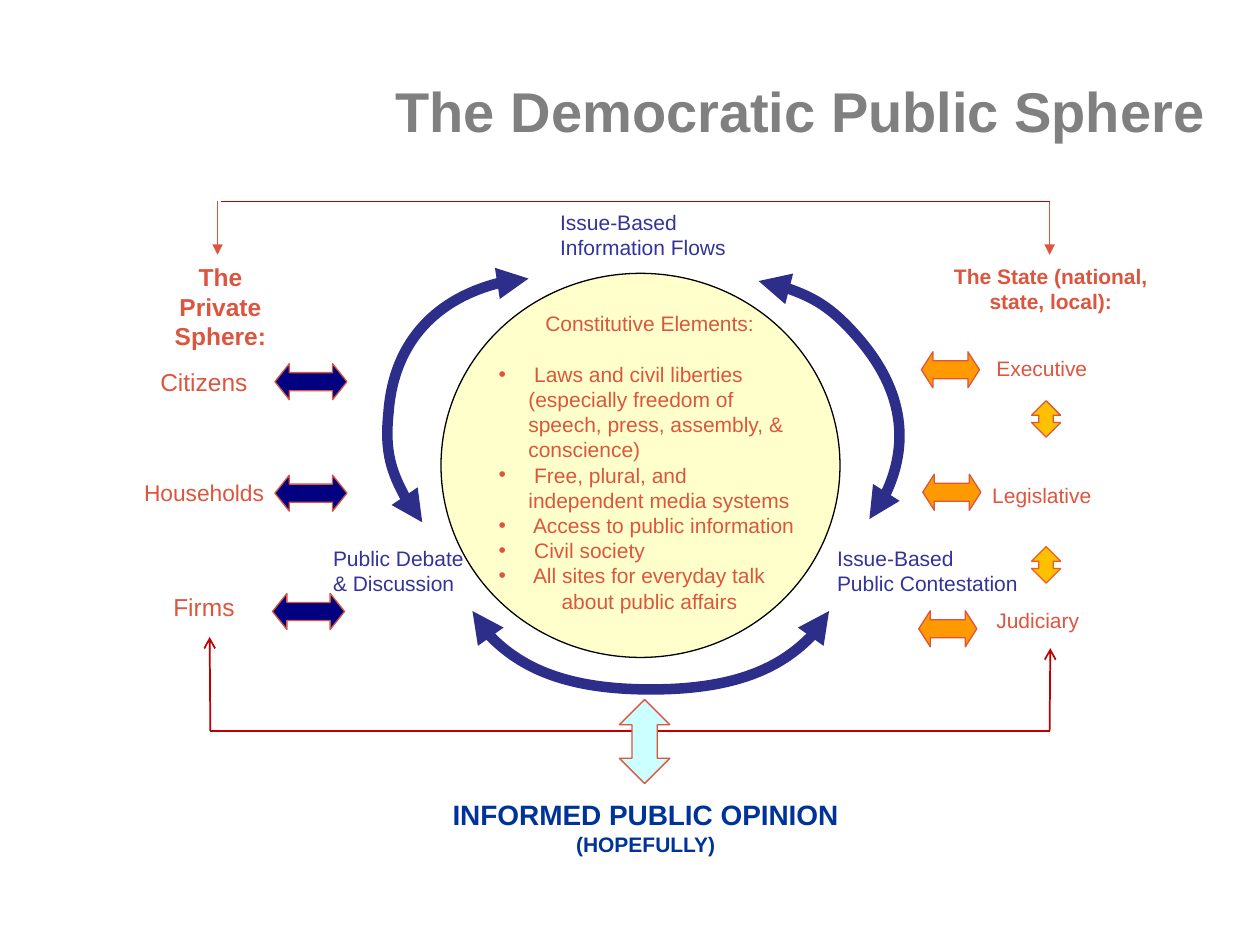
from lxml import etree
from pptx import Presentation
from pptx.dml.color import RGBColor
from pptx.enum.shapes import MSO_CONNECTOR, MSO_SHAPE
from pptx.enum.text import MSO_ANCHOR, MSO_AUTO_SIZE, PP_ALIGN
from pptx.oxml.ns import qn
from pptx.util import Pt

LEFT, CENTER = PP_ALIGN.LEFT, PP_ALIGN.CENTER
TOP, MIDDLE = MSO_ANCHOR.TOP, MSO_ANCHOR.MIDDLE
NO_AUTOFIT = MSO_AUTO_SIZE.NONE
STRAIGHT = MSO_CONNECTOR.STRAIGHT
OVAL = MSO_SHAPE.OVAL
ACROSS, UP_DOWN = MSO_SHAPE.LEFT_RIGHT_ARROW, MSO_SHAPE.UP_DOWN_ARROW

GRAY = RGBColor(0x80, 0x80, 0x80)
BLACK = RGBColor(0, 0, 0)
CORAL = RGBColor(0xDC, 0x55, 0x3E)
RED = RGBColor(0xC0, 0, 0)
INDIGO = RGBColor(0x33, 0x33, 0x99)
ARC_BLUE = RGBColor(0x2D, 0x2D, 0x8A)
NAVY = RGBColor(0, 0, 0x80)
ROYAL = RGBColor(0, 0x33, 0x99)
ORANGE = RGBColor(0xFF, 0x99, 0)
GOLD = RGBColor(0xFF, 0xC0, 0)
RUST = RGBColor(0xF0, 0x5B, 0x20)
CYAN = RGBColor(0xCC, 0xFF, 0xFF)
CREAM = RGBColor(0xFF, 0xFF, 0xCC)

# Content: boxes are (left, top, width, height) in points
TITLE = "The Democratic Public Sphere "
TITLE_BOX = (216, 18, 492, 90)
CIRCLE_BOX = (252, 156.2, 228, 219.5)
ELEMENTS_BOX = (280.6, 175.4, 181.4, 198.7)
ELEMENTS_HEADING = "Constitutive Elements:"
ELEMENTS = [
    " Laws and civil liberties (especially freedom of speech, press, assembly, & conscience)",
    " Free, plural, and independent media systems",
    " Access to public information",
    " Civil society",
    " All sites for everyday talk",
]
ELEMENTS_ENDING = "about public affairs"

FLOW_LABELS = [
    (["Public Debate", "& Discussion"], (186, 309.6, 92, 33)),
    (["Issue-Based Information Flows"], (315.8, 117.6, 134, 33)),
    (["Issue-Based", "Public Contestation"], (474, 309.6, 114, 33)),
]
HEADINGS = [
    ("The Private Sphere:", (84.5, 147.6, 83, 55), 14),
    ("The State (national, state, local):", (539.5, 148.3, 122, 48), 12),
]
ACTORS = [
    ("Citizens", (76.6, 207.6, 80, 21), 14),
    ("Households", (76.6, 271.5, 80, 20), 13),
    ("Firms", (76.6, 335.9, 80, 21), 14),
    ("Executive ", (552, 201, 90, 18), 12),
    ("Legislative ", (552, 273.5, 90, 18), 12),
    ("Judiciary ", (547.5, 345, 94.3, 18), 12),
]

# Block arrows: shape, left-top corners, size, adjustments, fill, outline
BLOCK_ARROWS = [
    (ACROSS, [(157.1, 207.8), (157.1, 271.5), (155.7, 339.1)], (41.2, 20.6), (0.5, 0.4), NAVY, CORAL),
    (ACROSS, [(526.5, 201), (527.3, 271), (525, 349)], (33.2, 20.6), (0.5, 0.32), ORANGE, CORAL),
    (UP_DOWN, [(589.5, 229)], (16.6, 20.8), (0.25, 0.5), GOLD, CORAL),
    (UP_DOWN, [(589.5, 312.4)], (16.6, 20.8), (0.25, 0.5), GOLD, RUST),
    (UP_DOWN, [(354, 399.7)], (28.8, 48), (0.43, 0.5), CYAN, CORAL),
]

# Arcs: a start point, then cubic curves (two controls and an end)
ARCS = [
    [(302, 159.2), (260, 161.3), (225, 193.7), (222, 236), (219.6, 258.5), (226.8, 281.5), (241.3, 298.5)],
    [(270, 349.2), (282.2, 375.8), (324, 394), (372, 394), (420, 394), (461.5, 375.8), (473.8, 349.2)],
    [(496.8, 296.6), (520.6, 268.6), (517.7, 224), (489.6, 192.2), (474.5, 175), (454.3, 163.5), (433.5, 160.6)],
]

# Frame lines: start, end, colour, width, arrowhead at the end
FRAME_LINES = [
    ((599.8, 114.8), (599.8, 145.6), CORAL, 0.75, "triangle"),
    ((124.3, 114.8), (124.3, 145.6), CORAL, 0.75, "triangle"),
    ((126, 115), (600, 115), RED, 0.75, None),
    ((120.2, 417.6), (119.8, 364), RED, 1, "arrow"),
    ((120.2, 417.6), (600, 417.6), RED, 1, None),
    ((599.8, 417.6), (600.2, 370.4), RED, 1, "arrow"),
]


def points(values):
    return [Pt(value) for value in values]


def add_text(paragraph, text, size=12, color=CORAL, bold=False, align=LEFT):
    paragraph.alignment = align
    run = paragraph.add_run()
    run.text = text
    run.font.name = "Arial"
    run.font.size = Pt(size)
    run.font.bold = bold
    run.font.color.rgb = color


def set_frame(frame, anchor=TOP, side=4.3, vertical=2.2):
    frame.word_wrap = True
    frame.auto_size = NO_AUTOFIT
    frame.vertical_anchor = anchor
    frame.margin_left = frame.margin_right = Pt(side)
    frame.margin_top = frame.margin_bottom = Pt(vertical)


def place(shape, box):
    shape.left, shape.top, shape.width, shape.height = points(box)


def add_label(slide, lines, box, **text_format):
    frame = slide.shapes.add_textbox(*points(box)).text_frame
    set_frame(frame)
    for index, line in enumerate(lines):
        paragraph = frame.add_paragraph() if index else frame.paragraphs[0]
        add_text(paragraph, line, **text_format)
    return frame


def add_filled(slide, kind, box, fill, outline):
    shape = slide.shapes.add_shape(kind, *points(box))
    shape.shadow.inherit = False
    shape.fill.solid()
    shape.fill.fore_color.rgb = fill
    set_line(shape, outline, 0.75)
    return shape


def set_line(shape, color, width, head=None, tail=None):
    shape.line.color.rgb = color
    shape.line.width = Pt(width)
    line = shape.line._get_or_add_ln()
    for tag, kind in (("a:headEnd", head), ("a:tailEnd", tail)):
        if kind:
            etree.SubElement(line, qn(tag), type=kind)


def set_indent(paragraph, left, first=0, bullet=True):
    properties = paragraph._p.get_or_add_pPr()
    properties.set("marL", str(Pt(left)))
    properties.set("indent", str(Pt(first)))
    if not bullet:
        etree.SubElement(properties, qn("a:buNone"))
    paragraph.space_before = Pt(0)


def add_curve(slide, arc):
    builder = slide.shapes.build_freeform(*points(arc[0]))
    builder.add_line_segments([points(point) for point in arc[1:]], close=False)
    curve = builder.convert_to_shape()
    # Each three straight segments become one cubic curve
    segments = list(curve._element.iter(qn("a:lnTo")))
    for first in range(0, len(segments), 3):
        cubic = etree.Element(qn("a:cubicBezTo"))
        segments[first].addprevious(cubic)
        for segment in segments[first:first + 3]:
            cubic.append(segment[0])
            segment.getparent().remove(segment)
    curve.shadow.inherit = False
    curve.fill.background()
    set_line(curve, ARC_BLUE, 6, "triangle", "triangle")


presentation = Presentation()
presentation.slide_width, presentation.slide_height = Pt(720), Pt(540)
slide = presentation.slides.add_slide(presentation.slide_layouts[1])
title, body = slide.shapes.title, slide.placeholders[1]

# Title
place(title, TITLE_BOX)
set_frame(title.text_frame, MIDDLE, 7.2, 3.6)
add_text(title.text_frame.paragraphs[0], TITLE, size=32, color=GRAY, bold=True, align=CENTER)

# Circle, behind its list
circle = add_filled(slide, OVAL, CIRCLE_BOX, CREAM, BLACK)
body._element.addprevious(circle._element)
place(body, ELEMENTS_BOX)
frame = body.text_frame
set_frame(frame)
heading = frame.paragraphs[0]
set_indent(heading, 0, bullet=False)
heading.space_after = Pt(14.4)
add_text(heading, ELEMENTS_HEADING, align=CENTER)
for element in ELEMENTS:
    paragraph = frame.add_paragraph()
    set_indent(paragraph, 17, -17)
    add_text(paragraph, element)
ending = frame.add_paragraph()
set_indent(ending, 36, bullet=False)
add_text(ending, ELEMENTS_ENDING)

# Arcs around the circle
for arc in ARCS:
    add_curve(slide, arc)

# Frame lines
for start, end, color, width, tail in FRAME_LINES:
    connector = slide.shapes.add_connector(STRAIGHT, *points(start + end))
    etree.SubElement(connector._element.spPr, qn("a:effectLst"))
    set_line(connector, color, width, tail=tail)

# Block arrows
for kind, corners, size, adjustments, fill, outline in BLOCK_ARROWS:
    for corner in corners:
        arrow = add_filled(slide, kind, corner + size, fill, outline)
        for index, value in enumerate(adjustments):
            arrow.adjustments[index] = value

# Labels
for lines, box in FLOW_LABELS:
    add_label(slide, lines, box, color=INDIGO)
for text, box, size in HEADINGS:
    add_label(slide, [text], box, size=size, bold=True, align=CENTER)
for text, box, size in ACTORS:
    add_label(slide, [text], box, size=size, align=CENTER)

# Outcome
opinion = add_label(slide, ["INFORMED PUBLIC OPINION "], (246, 453.6, 246, 38),
                    size=16, color=ROYAL, bold=True, align=CENTER)
add_text(opinion.paragraphs[0], "(HOPEFULLY)", color=ROYAL, bold=True, align=CENTER)

presentation.save("out.pptx")
